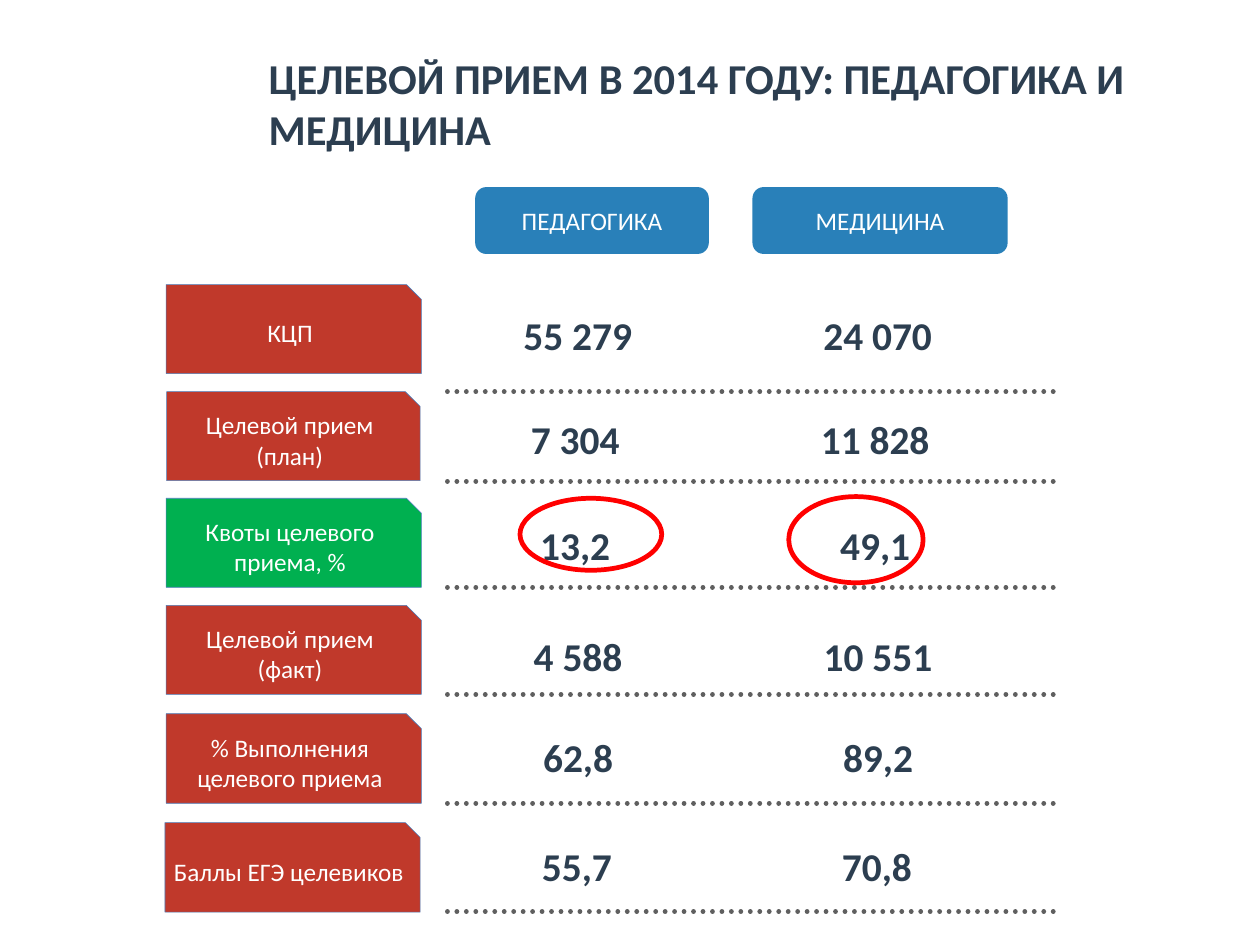
"""Build the slide on targeted admission in pedagogy and medicine, 2014."""
import pptx
import pptx.dml.color
import pptx.enum.dml
import pptx.enum.shapes
import pptx.enum.text
import pptx.oxml.ns
import pptx.util

Inches, Pt = pptx.util.Inches, pptx.util.Pt
RGB = pptx.dml.color.RGBColor.from_string
SHAPE = pptx.enum.shapes.MSO_SHAPE
ALIGN = pptx.enum.text.PP_ALIGN
ANCHOR = pptx.enum.text.MSO_ANCHOR

COLORS = {"dark": "2C3E50", "white": "FFFFFF", "red": "C0392B", "green": "00B050",
          "blue": "2980B9", "edge": "4B7EBC", "dots": "5F5F5F", "ring": "FF0000"}
TITLE = {"size": Pt(54), "bold": True}
VALUE = {"size": Pt(50), "bold": True}
LABEL = {"size": Pt(32), "bold": False}


def write(sp, text, style, color, align, anchor):
    tf = sp.text_frame
    tf.word_wrap = True
    tf.vertical_anchor = anchor
    p = tf.paragraphs[0]
    p.text = text
    p.alignment = align
    for r in p.runs:
        for name, value in {"name": "Calibri", **style}.items():
            setattr(r.font, name, value)
        r.font.color.rgb = RGB(COLORS[color])


def add_shape(kind, box, fill=None, line=None, width=0.75):
    sp = s.shapes.add_shape(kind, *map(Inches, box))
    sp.shadow.inherit = False
    for part, color in ((sp.fill, fill), (sp.line.fill, line)):
        if color:
            part.solid()
            part.fore_color.rgb = RGB(COLORS[color])
        else:
            part.background()
    if line:
        sp.line.width = Pt(width)
    return sp


prs = pptx.Presentation()
prs.slide_width, prs.slide_height = Inches(22.22), Inches(16.67)
s = prs.slides.add_slide(prs.slide_layouts[6])

title = s.shapes.add_textbox(*map(Inches, (4.64, 0.86, 16.99, 2.12)))
write(title, "ЦЕЛЕВОЙ ПРИЕМ В 2014 ГОДУ: ПЕДАГОГИКА И МЕДИЦИНА",
      TITLE, "dark", ALIGN.LEFT, ANCHOR.TOP)

for text, left, width in (("ПЕДАГОГИКА", 8.38, 4.12), ("МЕДИЦИНА", 13.27, 4.5)):
    header = add_shape(SHAPE.ROUNDED_RECTANGLE, (left, 3.3, width, 1.18), "blue")
    write(header, text, LABEL, "white", ALIGN.CENTER, ANCHOR.MIDDLE)

ROWS = [
    ("КЦП", "red", (2.93, 5.02, 4.5, 1.57), ("55 279", "24 070"), (8.62, 5.37, 3.14, 1.01), 6.91),
    ("Целевой прием\v(план)", "red", (2.94, 6.91, 4.47, 1.57), ("7 304", "11 828"), (8.62, 7.21, 3.05, 1.01), 8.49),
    ("Квоты целевого приема, %", "green", (2.93, 8.79, 4.5, 1.57), ("13,2", "49,1"), (8.62, 9.09, 3.05, 1.11), 10.36),
    ("Целевой прием (факт)", "red", (2.93, 10.68, 4.5, 1.57), ("4 588", "10 551"), (8.67, 11.05, 3.05, 1.03), 12.25),
    ("% Выполнения целевого приема", "red", (2.93, 12.59, 4.5, 1.58), ("62,8", "89,2"), (8.67, 12.83, 3.05, 1.14), 14.17),
    ("Баллы ЕГЭ целевиков", "red", (2.91, 14.51, 4.5, 1.58), ("55,7", "70,8"), (8.65, 14.75, 3.05, 1.14), 16.08),
]
COLUMN_STEP = 5.29

for text, fill, label_box, values, (left, top, width, height), line_y in ROWS:
    label = add_shape(SHAPE.SNIP_1_RECTANGLE, label_box, fill, "edge")
    write(label, text, LABEL, "white", ALIGN.CENTER, ANCHOR.MIDDLE)

    line = s.shapes.add_connector(pptx.enum.shapes.MSO_CONNECTOR.STRAIGHT,
                                  Inches(7.89), Inches(line_y), Inches(18.73), Inches(line_y))
    line.line.color.rgb = RGB(COLORS["dots"])
    line.line.width = Pt(6)
    line.line.dash_style = pptx.enum.dml.MSO_LINE.ROUND_DOT
    props = line._element.spPr
    props.find(pptx.oxml.ns.qn("a:ln")).set("cap", "rnd")
    props.append(pptx.oxml.parse_xml(f"<a:effectLst {pptx.oxml.ns.nsdecls('a')}/>"))

    for col, value in enumerate(values):
        box = (left + col * COLUMN_STEP, top, width, height)
        tb = s.shapes.add_textbox(*map(Inches, box))
        write(tb, value, VALUE, "dark", ALIGN.CENTER, ANCHOR.TOP)
        for side, inset in {"left": 0.22, "top": 0.11, "right": 0.22, "bottom": 0.11}.items():
            setattr(tb.text_frame, f"margin_{side}", Inches(inset))

for box in ((13.91, 8.76, 2.37, 1.52), (9.17, 8.79, 2.5, 1.27)):
    add_shape(SHAPE.OVAL, box, line="ring", width=6)

prs.save("out.pptx")
